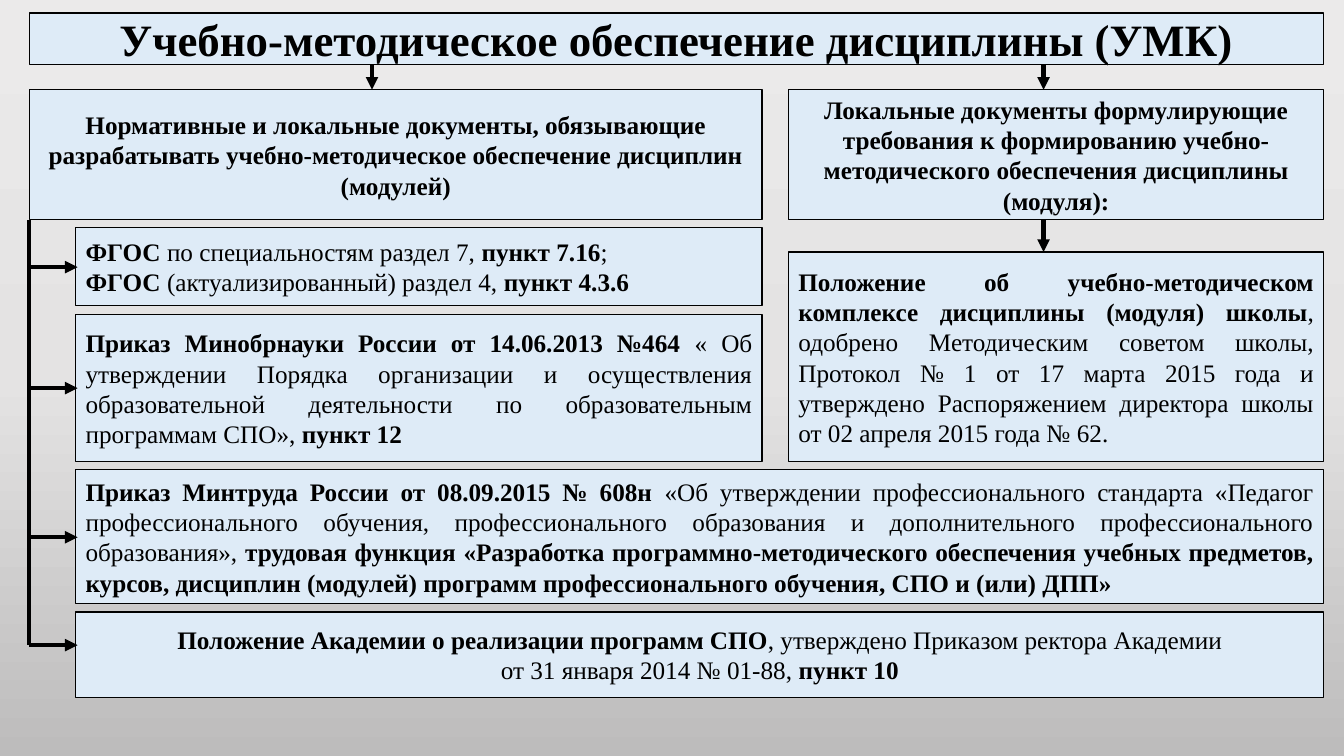
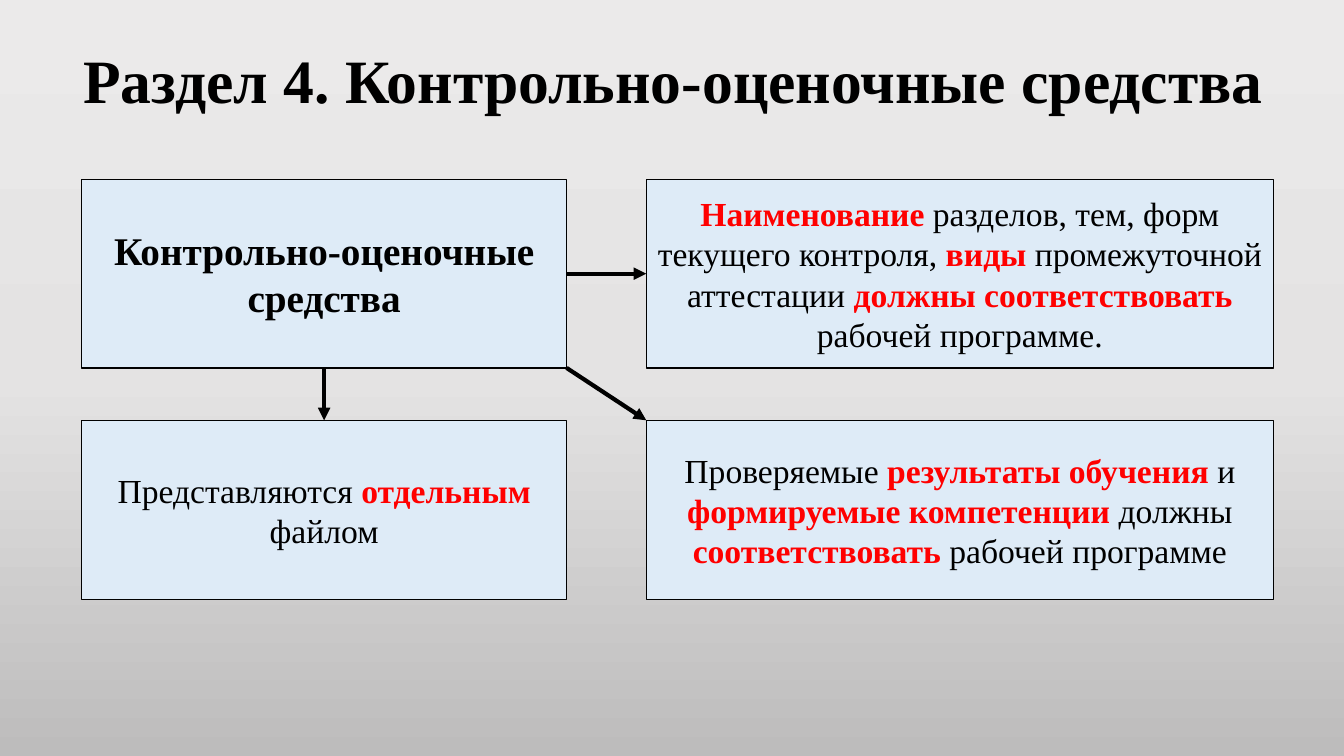
from copy import deepcopy

from lxml import etree
from pptx import Presentation
from pptx.dml.color import RGBColor
from pptx.enum.shapes import MSO_CONNECTOR, MSO_SHAPE
from pptx.enum.text import MSO_ANCHOR, PP_ALIGN
from pptx.oxml.ns import qn
from pptx.util import Inches, Pt

RECT = MSO_SHAPE.RECTANGLE
STRAIGHT = MSO_CONNECTOR.STRAIGHT
MIDDLE = MSO_ANCHOR.MIDDLE
CENTER = PP_ALIGN.CENTER
JUSTIFY = PP_ALIGN.JUSTIFY


def rgb(value):
    return RGBColor.from_string(value)


def write(tf, text, size=18, align=CENTER, accent="000000", spacing=None):
    """Fill a text frame, one paragraph a line; *asterisks* mark bold accented words."""
    tf.word_wrap = True
    tf.vertical_anchor = MIDDLE
    for i, line in enumerate(text.split("\n")):
        p = tf.add_paragraph() if i else tf.paragraphs[0]
        p.alignment = align
        if spacing:
            p.line_spacing = spacing
        for j, part in enumerate(line.split("*")):
            if not part:
                continue
            r = p.add_run()
            r.text = part
            r.font.name = Deck.FONT
            r.font.size = Pt(size)
            r.font.bold = j % 2 == 1
            r.font.color.rgb = rgb(accent if r.font.bold else Deck.INK)


class Deck:
    FONT = "Times New Roman"
    INK = "000000"
    RED = "FF0000"
    BOX = "DEEBF7"
    BACKGROUND = ("EBEAEA", "E4E3E3", "BDBCBC")

    def __init__(self):
        self.prs = Presentation()
        self.prs.slide_width = Inches(13.33)
        self.prs.slide_height = Inches(7.5)
        self.s = None
        self.set_background()

    def set_background(self):
        master = self.prs.slide_master
        fill = master.background.fill
        fill.gradient()
        fill.gradient_angle = 270
        first = next(master.element.iter(qn("a:gs")))
        middle = deepcopy(first)
        middle.set("pos", "50000")
        first.addnext(middle)
        for stop, color in zip(fill.gradient_stops, self.BACKGROUND):
            stop.color.rgb = rgb(color)

    def slide(self):
        self.s = self.prs.slides.add_slide(self.prs.slide_layouts[6])

    def title(self, x, y, w, h, text):
        sp = self.s.shapes.add_textbox(Inches(x), Inches(y), Inches(w), Inches(h))
        write(sp.text_frame, text, size=44, spacing=0.9)

    def box(self, x, y, w, h, text, **style):
        sp = self.s.shapes.add_shape(RECT, Inches(x), Inches(y), Inches(w), Inches(h))
        sp.shadow.inherit = False
        sp.fill.solid()
        sp.fill.fore_color.rgb = rgb(self.BOX)
        sp.line.color.rgb = rgb(self.INK)
        sp.line.width = Pt(1)
        write(sp.text_frame, text, **style)

    def line(self, x1, y1, x2, y2, arrow=True):
        c = self.s.shapes.add_connector(
            STRAIGHT, Inches(x1), Inches(y1), Inches(x2), Inches(y2))
        c.line.color.rgb = rgb(self.INK)
        c.line.width = Pt(3)
        props = c.element.spPr
        if arrow:
            etree.SubElement(props.find(qn("a:ln")), qn("a:tailEnd"), type="triangle")
        etree.SubElement(props, qn("a:effectLst"))


def support_slide(deck):
    left, indent, middle, local, right = 0.29, 0.75, 7.56, 7.82, 13.13
    heads_y, heads_h = 0.89, 1.29
    heads_end = heads_y + heads_h
    deck.slide()
    deck.box(left, 0.13, right - left, 0.51,
             "*Учебно-методическое обеспечение дисциплины (УМК)*", size=32)
    deck.box(left, heads_y, middle - left, heads_h,
             "*Нормативные и локальные документы, обязывающие разрабатывать "
             "учебно-методическое обеспечение дисциплин (модулей)*")
    deck.box(local, heads_y, right - local, heads_h,
             "*Локальные документы формулирующие требования к формированию "
             "учебно-методического обеспечения дисциплины (модуля):*")
    documents = [
        (2.26, 0.77, middle, JUSTIFY,
         "*ФГОС* по специальностям раздел 7, *пункт 7.16*;\n"
         "*ФГОС* (актуализированный) раздел 4, *пункт 4.3.6*"),
        (3.12, 1.46, middle, JUSTIFY,
         "*Приказ Минобрнауки России от 14.06.2013 №464 *« Об утверждении Порядка "
         "организации и осуществления образовательной деятельности по "
         "образовательным программам СПО», *пункт 12*"),
        (4.66, 1.33, right, JUSTIFY,
         "*Приказ Минтруда России от 08.09.2015 № 608н *«Об утверждении "
         "профессионального стандарта «Педагог профессионального обучения, "
         "профессионального образования и дополнительного профессионального "
         "образования», *трудовая функция «Разработка программно-методического "
         "обеспечения учебных предметов, курсов, дисциплин (модулей) программ "
         "профессионального обучения, СПО и (или) ДПП»*"),
        (6.07, 0.85, right, CENTER,
         "*Положение Академии о реализации программ СПО*, утверждено Приказом "
         "ректора Академии\nот 31 января 2014 № 01-88, *пункт 10*"),
    ]
    for y, h, end, align, text in documents:
        deck.box(indent, y, end - indent, h, text, align=align)
    deck.box(local, 2.5, right - local, 2.08,
             "*Положение об учебно-методическом комплексе дисциплины (модуля) школы*, "
             "одобрено Методическим советом школы, Протокол № 1 от 17 марта 2015 года "
             "и утверждено Распоряжением директора школы от 02 апреля 2015 года № 62.",
             align=JUSTIFY)
    for x, y1, y2 in [(3.69, 0.64, heads_y), (10.35, 0.64, heads_y),
                      (10.35, heads_end, 2.5)]:
        deck.line(x, y1, x, y2)
    branches = [2.65, 3.85, 5.33, 6.4]
    deck.line(left, heads_end, left, branches[-1], arrow=False)
    for y in branches:
        deck.line(left, y, indent + 0.02, y)


def assessment_slide(deck):
    x1, w1, x2, w2 = 0.81, 4.81, 6.41, 6.22
    y1, h1, y2, h2 = 1.78, 1.87, 4.17, 1.78
    deck.slide()
    deck.title(0.28, 0.4, 12.8, 0.86, "*Раздел 4. Контрольно-оценочные средства*")
    deck.box(x1, y1, w1, h1, "*Контрольно-оценочные средства*", size=28)
    requirements = [
        (x1, y2, w1, h2, "Представляются *отдельным* файлом"),
        (x2, y1, w2, h1,
         "*Наименование* разделов, тем, форм текущего контроля, *виды* "
         "промежуточной аттестации *должны соответствовать *рабочей программе."),
        (x2, y2, w2, h2,
         "Проверяемые* результаты обучения *и *формируемые компетенции *должны "
         "*соответствовать* рабочей программе"),
    ]
    for x, y, w, h, text in requirements:
        deck.box(x, y, w, h, text, size=24, accent=deck.RED)
    center_x, center_y = x1 + w1 / 2, y1 + h1 / 2
    deck.line(x1 + w1, center_y, x2, center_y)
    deck.line(x1 + w1, y1 + h1, x2, y2)
    deck.line(center_x, y1 + h1, center_x, y2)


def main():
    deck = Deck()
    support_slide(deck)
    assessment_slide(deck)
    deck.prs.save("out.pptx")


if __name__ == "__main__":
    main()
